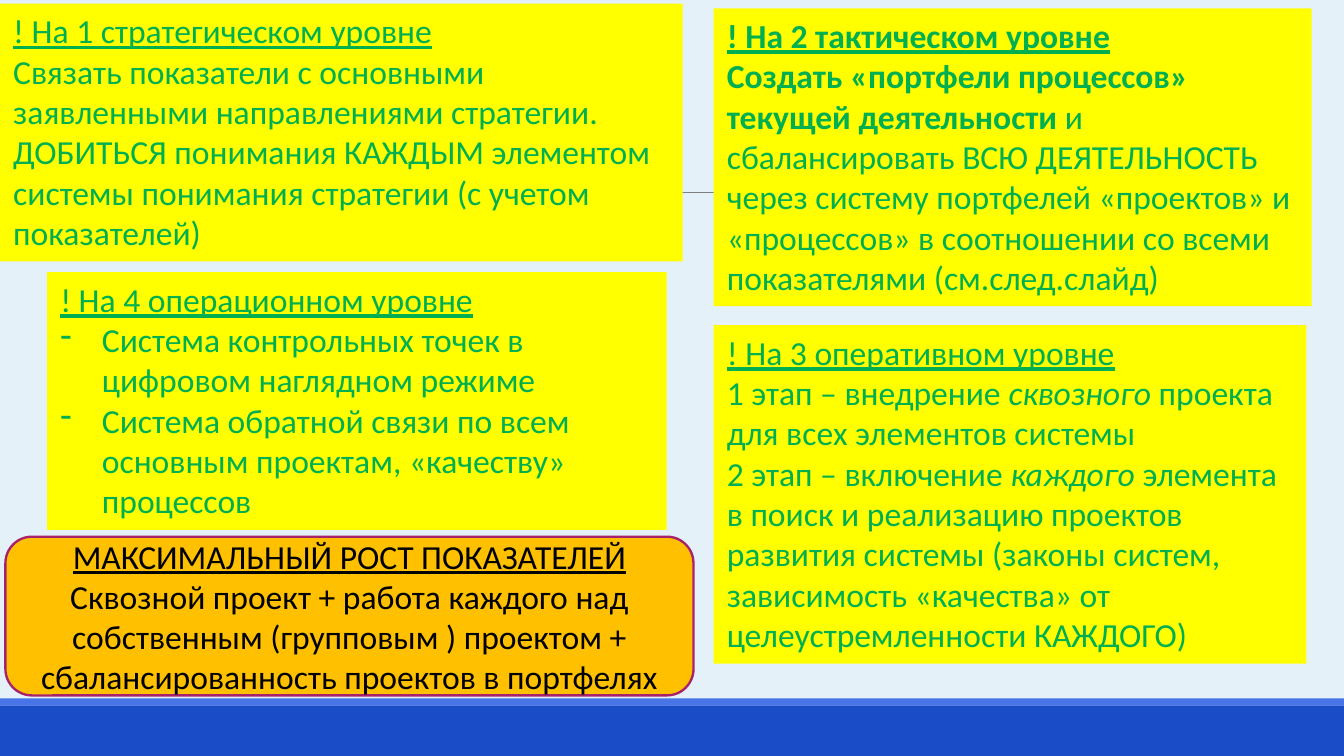
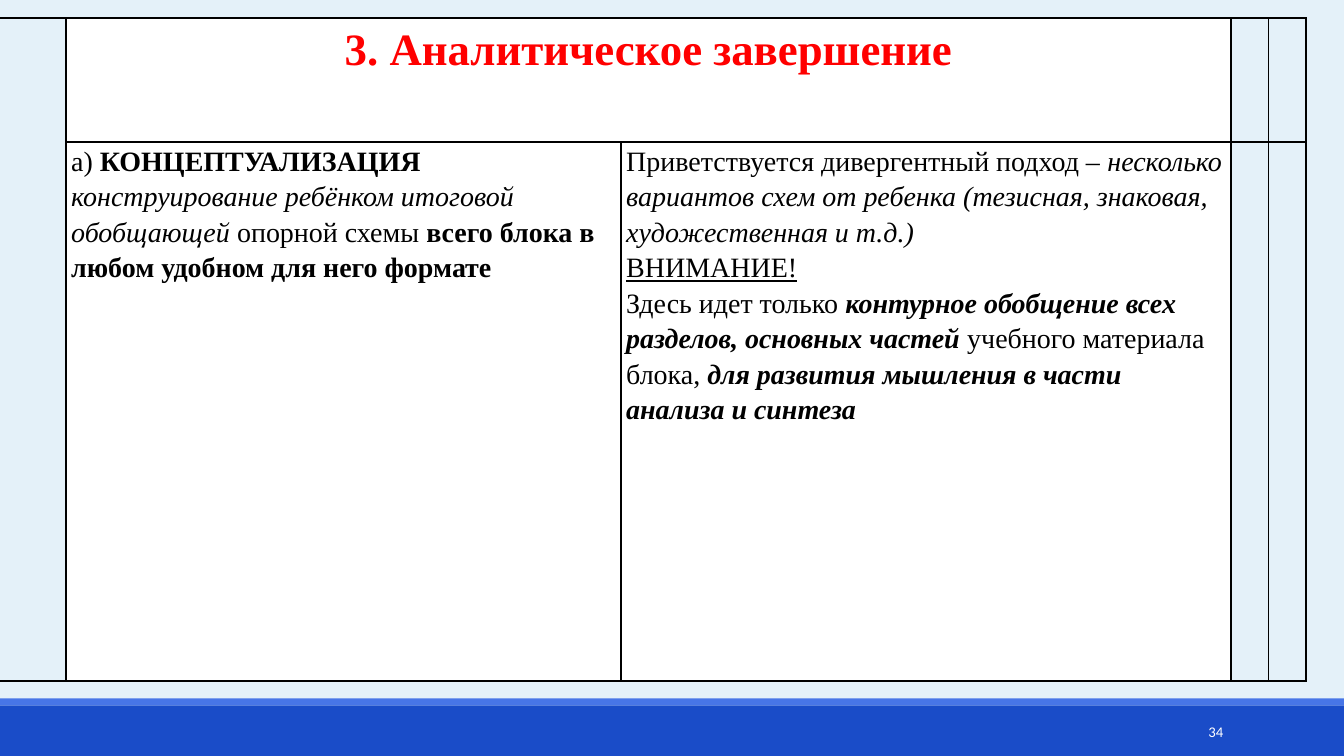
from dataclasses import dataclass

from lxml.etree import SubElement
from pptx import Presentation
from pptx.dml.color import RGBColor
from pptx.enum.shapes import MSO_CONNECTOR, MSO_SHAPE
from pptx.enum.text import MSO_ANCHOR, PP_ALIGN
from pptx.oxml.ns import qn
from pptx.util import Inches, Pt

BACKGROUND = RGBColor(0xE4, 0xF1, 0xF9)
DARK_BLUE = RGBColor(0x1A, 0x4C, 0xC8)
LIGHT_BLUE = RGBColor(0x47, 0x75, 0xE7)
GREY = RGBColor(0x80, 0x80, 0x80)
YELLOW = RGBColor(0xFF, 0xFF, 0x00)
GREEN = RGBColor(0x00, 0xB0, 0x50)
AMBER = RGBColor(0xFF, 0xC0, 0x00)
PLUM = RGBColor(0xA8, 0x21, 0x6B)
RED = RGBColor(0xFF, 0x00, 0x00)
BLACK = RGBColor(0x00, 0x00, 0x00)
WHITE = RGBColor(0xFF, 0xFF, 0xFF)

SANS = "Calibri"
SERIF = "Times New Roman"


@dataclass
class Box:
    """A rectangle whose regions are given in hundredths of its size."""

    left: int
    top: int
    width: int
    height: int

    def region(self, column, row, columns, rows):
        """Return the region of this box at the given grid position."""
        return Box(
            int(self.left + self.width * column / 100),
            int(self.top + self.height * row / 100),
            int(self.width * columns / 100),
            int(self.height * rows / 100),
        )

    def frame(self):
        """Return the four lengths in the order that shapes take them."""
        return self.left, self.top, self.width, self.height


SLIDE = Box(0, 0, Inches(10), Inches(5.625))
FOOTER = SLIDE.region(0, 92.4, 100, 7.6)

LEVEL_CARDS = [
    (SLIDE.region(53.1, 43, 44.1, 44.8), [
        [("! На 3 оперативном уровне", "u")],
        [("1 этап – внедрение ", ""), ("сквозного", "i"),
         (" проекта для всех элементов системы", "")],
        [("2 этап – включение ", ""), ("каждого ", "i"),
         ("элемента в поиск и реализацию проектов развития системы (законы систем, "
          "зависимость «качества» от целеустремленности КАЖДОГО)", "")],
    ], []),
    (SLIDE.region(53.1, 1.1, 44.5, 39.4), [
        [("! На 2 тактическом уровне", "bu")],
        [("Создать «портфели процессов» текущей деятельности ", "b"),
         ("и сбалансировать ВСЮ ДЕЯТЕЛЬНОСТЬ через систему портфелей «проектов» и "
          "«процессов» в соотношении со всеми показателями (см.след.слайд)", "")],
    ], []),
    (SLIDE.region(0, 0.5, 50.8, 34.1), [
        [("! На 1 стратегическом уровне", "u")],
        [("Связать показатели с основными заявленными направлениями стратегии. "
          "ДОБИТЬСЯ понимания КАЖДЫМ элементом системы понимания стратегии "
          "(с учетом показателей)", "")],
    ], []),
    (SLIDE.region(3.5, 36, 46.1, 34.1), [
        [("! На 4 операционном уровне", "u")],
    ], [
        [("Система контрольных точек в цифровом наглядном режиме", "")],
        [("Система обратной связи по всем основным проектам, «качеству» процессов", "")],
    ]),
]

GROWTH = [
    [("МАКСИМАЛЬНЫЙ РОСТ ПОКАЗАТЕЛЕЙ", "u")],
    [("Сквозной проект + работа каждого над собственным (групповым ) проектом + "
      "сбалансированность проектов в портфелях", "")],
]

ANALYSIS_TITLE = [[("3. Аналитическое завершение", "b")]]
CONCEPT = [
    [("а) ", ""), ("КОНЦЕПТУАЛИЗАЦИЯ", "b")],
    [("конструирование ребёнком итоговой обобщающей", "i"), (" опорной схемы ", ""),
     ("всего блока в любом удобном для него формате", "b")],
]
APPROACH = [
    [("Приветствуется дивергентный подход – ", ""),
     ("несколько вариантов схем от ребенка (тезисная, знаковая, художественная и т.д.)", "i")],
    [("ВНИМАНИЕ!", "u")],
    [("Здесь идет только ", ""), ("контурное обобщение всех разделов, основных частей", "bi"),
     (" учебного материала блока, ", ""),
     ("для развития мышления в части анализа и синтеза", "bi")],
]
COLUMN_WEIGHTS = [69, 413, 454, 28, 28]
ROW_WEIGHTS = [92, 401]


def write(text_frame, paragraphs, size=18, font=SANS, color=BLACK,
          align=PP_ALIGN.LEFT, spacing=1.0, bullet=None):
    """Append paragraphs of (text, style letters b, i, u) runs to a text frame."""
    for runs in paragraphs:
        paragraph = text_frame.paragraphs[-1]
        if paragraph.runs:
            paragraph = text_frame.add_paragraph()
        paragraph.alignment = align
        paragraph.line_spacing = spacing
        if bullet:
            properties = paragraph._p.get_or_add_pPr()
            properties.set("marL", str(Inches(0.31)))
            properties.set("indent", str(-Inches(0.31)))
            SubElement(properties, qn("a:buChar")).set("char", bullet)
        for text, style in runs:
            run = paragraph.add_run()
            run.text = text
            run.font.size = Pt(size)
            run.font.name = font
            run.font.color.rgb = color
            run.font.bold = "b" in style
            run.font.italic = "i" in style
            run.font.underline = "u" in style


def add_panel(slide, box, fill, preset=MSO_SHAPE.RECTANGLE, outline=None,
              anchor=MSO_ANCHOR.TOP):
    """Add a filled shape without shadow and return it."""
    shape = slide.shapes.add_shape(preset, *box.frame())
    shape.shadow.inherit = False
    shape.fill.solid()
    shape.fill.fore_color.rgb = fill
    if outline:
        shape.line.color.rgb = outline
        shape.line.width = Pt(1.25)
    else:
        shape.line.fill.background()
    shape.text_frame.word_wrap = True
    shape.text_frame.vertical_anchor = anchor
    return shape


def add_rule(slide, box):
    """Add a thin grey line along the top of the box."""
    rule = slide.shapes.add_connector(
        MSO_CONNECTOR.STRAIGHT, box.left, box.top, box.left + box.width, box.top)
    rule.line.color.rgb = GREY
    rule.line.width = Pt(0.5)
    SubElement(rule._element.spPr, qn("a:effectLst"))


def add_base_slide(presentation):
    """Add a blank slide with the shared footer bands and rule."""
    slide = presentation.slides.add_slide(presentation.slide_layouts[6])
    add_panel(slide, FOOTER.region(0, 12, 100, 88), DARK_BLUE)
    add_panel(slide, FOOTER.region(0, 0, 100, 12), LIGHT_BLUE)
    add_rule(slide, SLIDE.region(9.8, 25.4, 81.7, 0))
    return slide


def add_page_number(slide, box, number):
    """Add the page number at the right of the footer box."""
    text_box = slide.shapes.add_textbox(*box.region(81.2, 23, 10.8, 70).frame())
    text_box.text_frame.word_wrap = True
    text_box.text_frame.vertical_anchor = MSO_ANCHOR.MIDDLE
    write(text_box.text_frame, [[(number, "")]], size=7.9, color=WHITE,
          align=PP_ALIGN.RIGHT)


def add_level_card(slide, box, paragraphs, items):
    """Add a yellow card with paragraphs and an optional dashed list."""
    text_frame = add_panel(slide, box, YELLOW).text_frame
    write(text_frame, paragraphs, color=GREEN)
    write(text_frame, items, color=GREEN, bullet="-")


def add_growth_box(slide, box):
    """Add the rounded conclusion box."""
    shape = add_panel(slide, box, AMBER, MSO_SHAPE.ROUNDED_RECTANGLE, PLUM,
                      MSO_ANCHOR.MIDDLE)
    write(shape.text_frame, GROWTH, align=PP_ALIGN.CENTER)


def format_cell(cell):
    """Give a cell black borders, narrow margins and no fill."""
    properties = cell._tc.get_or_add_tcPr()
    for side in ("lnL", "lnR", "lnT", "lnB"):
        line = SubElement(properties, qn(f"a:{side}"), w=str(Pt(1)))
        fill = SubElement(line, qn("a:solidFill"))
        SubElement(fill, qn("a:srgbClr"), val=str(BLACK))
    cell.margin_left = cell.margin_right = Inches(0.04)
    cell.margin_top = cell.margin_bottom = 0
    cell.fill.background()


def fill_cell(cell, paragraphs, **text_format):
    """Write text into a white cell."""
    cell.fill.solid()
    cell.fill.fore_color.rgb = WHITE
    write(cell.text_frame, paragraphs, font=SERIF, spacing=1.15, **text_format)


def add_analysis_table(slide, box):
    """Add the table with a merged heading and two text columns."""
    table = slide.shapes.add_table(
        len(ROW_WEIGHTS), len(COLUMN_WEIGHTS), *box.frame()).table
    table.first_row = table.horz_banding = False
    for column, weight in zip(table.columns, COLUMN_WEIGHTS):
        column.width = int(box.width * weight / sum(COLUMN_WEIGHTS))
    for row, weight in zip(table.rows, ROW_WEIGHTS):
        row.height = int(box.height * weight / sum(ROW_WEIGHTS))
    for cell in table.iter_cells():
        format_cell(cell)
    table.cell(0, 0).merge(table.cell(1, 0))
    table.cell(0, 1).merge(table.cell(0, 2))
    fill_cell(table.cell(0, 1), ANALYSIS_TITLE, size=24, color=RED,
              align=PP_ALIGN.CENTER)
    fill_cell(table.cell(1, 1), CONCEPT, size=15)
    fill_cell(table.cell(1, 2), APPROACH, size=15)


def build_levels_slide(presentation):
    """Build the slide of the four levels and the conclusion."""
    slide = add_base_slide(presentation)
    for box, paragraphs, items in LEVEL_CARDS:
        add_level_card(slide, box, paragraphs, items)
    add_growth_box(slide, SLIDE.region(0.4, 71, 51.2, 21))


def build_analysis_slide(presentation):
    """Build the slide of the analytical conclusion."""
    slide = add_base_slide(presentation)
    add_page_number(slide, FOOTER, "34")
    add_analysis_table(slide, SLIDE.region(-2, 2.4, 99.2, 87.7))


def main():
    """Build and save the presentation."""
    presentation = Presentation()
    presentation.slide_width = SLIDE.width
    presentation.slide_height = SLIDE.height
    background = presentation.slide_master.background.fill
    background.solid()
    background.fore_color.rgb = BACKGROUND
    build_levels_slide(presentation)
    build_analysis_slide(presentation)
    presentation.save("out.pptx")


if __name__ == "__main__":
    main()
